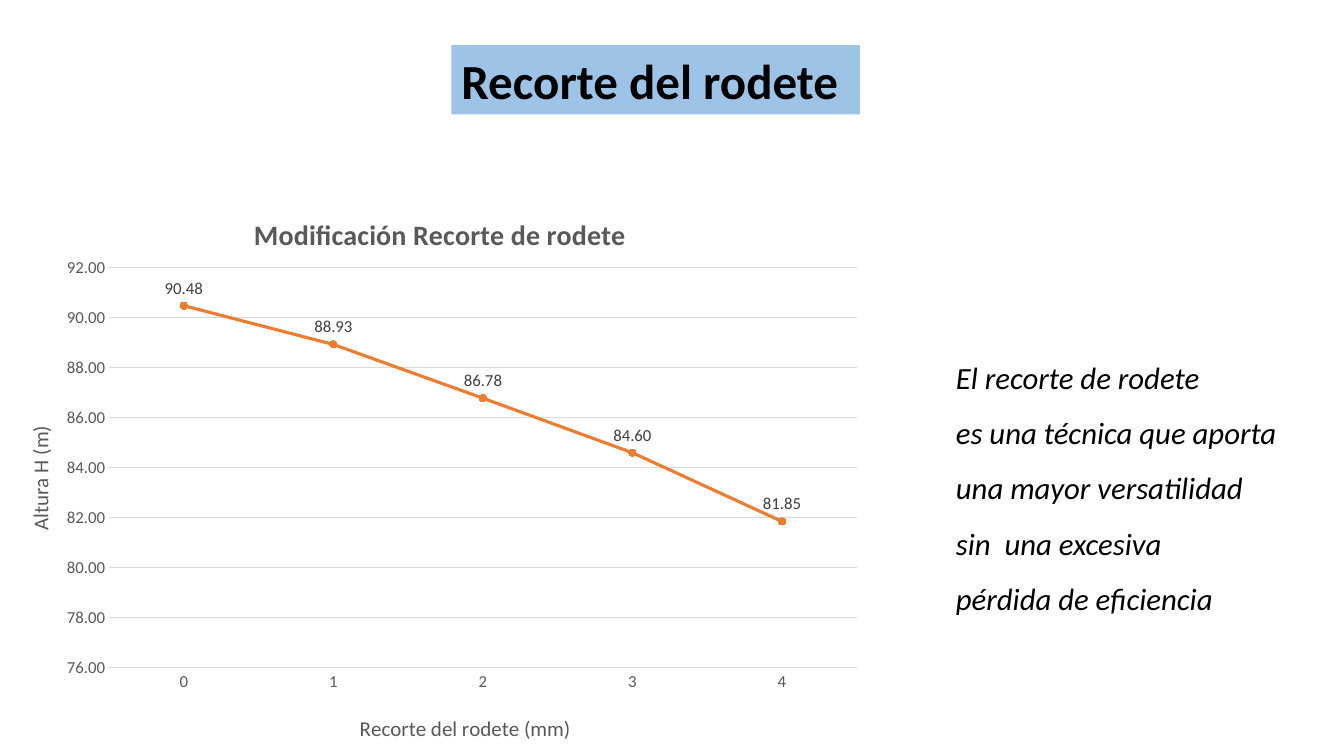
from dataclasses import dataclass

from lxml import etree
from pptx import Presentation
from pptx.chart.data import CategoryChartData
from pptx.dml.color import RGBColor
from pptx.enum.chart import XL_CHART_TYPE, XL_LABEL_POSITION, XL_MARKER_STYLE, XL_TICK_MARK
from pptx.enum.shapes import MSO_SHAPE
from pptx.enum.text import MSO_ANCHOR, PP_ALIGN
from pptx.oxml.ns import qn
from pptx.util import Emu, Pt

LINE_MARKERS = XL_CHART_TYPE.LINE_MARKERS
ABOVE = XL_LABEL_POSITION.ABOVE
CIRCLE = XL_MARKER_STYLE.CIRCLE
NO_TICK = XL_TICK_MARK.NONE
RECT = MSO_SHAPE.RECTANGLE
MIDDLE = MSO_ANCHOR.MIDDLE
LEFT = PP_ALIGN.LEFT
EMU_PER_PX = 9525


@dataclass(frozen=True)
class Theme:
    font: str = "Calibri"
    black: str = "000000"
    banner: str = "9DC3E6"
    series: str = "ED7D31"
    grid: str = "D9D9D9"
    muted: str = "595959"
    label: str = "404040"
    heading_size: int = 35
    body_size: int = 22
    chart_title_size: int = 20
    axis_title_size: int = 15
    tick_size: int = 12


THEME = Theme()


def px(n):
    return Emu(n * EMU_PER_PX)


def rgb(color):
    return RGBColor.from_string(color)


def style_font(font, size, color, bold=False, italic=False):
    font.name = THEME.font
    font.size = Pt(size)
    font.color.rgb = rgb(color)
    font.bold = bold
    font.italic = italic


def add_run(p, text, size, color, bold=False, italic=False):
    r = p.add_run()
    r.text = text
    style_font(r.font, size, color, bold, italic)


def set_layout(el, box, x, y, w=None, h=None):
    layout = el.find(qn("c:layout"))
    if layout is None:
        layout = etree.Element(qn("c:layout"))
        el.insert(0 if el.find(qn("c:tx")) is None else 1, layout)
    manual = etree.SubElement(layout, qn("c:manualLayout"))
    values = {"xMode": "edge", "yMode": "edge", "x": x / box[2], "y": y / box[3]}
    if w:
        etree.SubElement(manual, qn("c:layoutTarget")).set("val", "inner")
        values.update(w=w / box[2], h=h / box[3])
    for tag, value in values.items():
        etree.SubElement(manual, qn(f"c:{tag}")).set("val", str(value))


def add_chart_title(title, box, text, size, x, y, bold=False):
    add_run(title.text_frame.paragraphs[0], text, size, THEME.muted, bold)
    set_layout(title.element, box, x, y)


def style_axis(axis):
    axis.major_tick_mark = NO_TICK
    axis.minor_tick_mark = NO_TICK
    style_font(axis.tick_labels.font, THEME.tick_size, THEME.muted)


def add_heading(s, box):
    sp = s.shapes.add_shape(RECT, *map(px, box))
    sp.shadow.inherit = False
    sp.fill.solid()
    sp.fill.fore_color.rgb = rgb(THEME.banner)
    sp.line.fill.background()
    tf = sp.text_frame
    tf.word_wrap = True
    tf.vertical_anchor = MIDDLE
    p = tf.paragraphs[0]
    p.alignment = LEFT
    add_run(p, "Recorte del rodete", THEME.heading_size, THEME.black, bold=True)


def add_height_chart(s, box):
    data = CategoryChartData(number_format="0.00")
    data.categories = ["0", "1", "2", "3", "4"]
    data.add_series("Altura H (m)", [90.48, 88.93, 86.78, 84.60, 81.85])
    chart = s.shapes.add_chart(LINE_MARKERS, *map(px, box), data).chart
    chart.has_legend = False
    style_font(chart.font, THEME.tick_size, THEME.muted)
    set_layout(chart.element.find(".//" + qn("c:plotArea")), box, 108, 77, 712, 381)

    chart.has_title = True
    add_chart_title(chart.chart_title, box, "Modificación Recorte de rodete",
                    THEME.chart_title_size, 241, 22, bold=True)

    cat = chart.category_axis
    style_axis(cat)
    cat.format.line.color.rgb = rgb(THEME.grid)
    cat.format.line.width = Pt(0.75)
    add_chart_title(cat.axis_title, box, "Recorte del rodete (mm)",
                    THEME.axis_title_size, 343, 498)

    val = chart.value_axis
    style_axis(val)
    val.minimum_scale, val.maximum_scale, val.major_unit = 76, 92, 2
    val.tick_labels.number_format = "0.00"
    val.tick_labels.number_format_is_linked = False
    val.format.line.fill.background()
    val.major_gridlines.format.line.color.rgb = rgb(THEME.grid)
    val.major_gridlines.format.line.width = Pt(0.75)
    add_chart_title(val.axis_title, box, "Altura H (m)", THEME.axis_title_size, 25, 224)

    plot = chart.plots[0]
    plot.vary_by_categories = False
    series = plot.series[0]
    series.smooth = False
    series.format.line.color.rgb = rgb(THEME.series)
    series.format.line.width = Pt(2.25)
    marker = series.marker
    marker.style = CIRCLE
    marker.size = 5
    marker.format.fill.solid()
    marker.format.fill.fore_color.rgb = rgb(THEME.series)
    marker.format.line.color.rgb = rgb(THEME.series)
    labels = series.data_labels
    labels.show_value = True
    labels.position = ABOVE
    labels.number_format = "0.00"
    labels.number_format_is_linked = False
    style_font(labels.font, THEME.tick_size, THEME.label)


def add_conclusion(s, box):
    tf = s.shapes.add_textbox(*map(px, box)).text_frame
    tf.word_wrap = True
    lines = [
        "El recorte de rodete",
        "es una técnica que aporta una mayor versatilidad",
        "sin  una excesiva",
        "pérdida de eficiencia",
    ]
    for i, line in enumerate(lines):
        p = tf.add_paragraph() if i else tf.paragraphs[0]
        p.line_spacing = 1.5
        add_run(p, line, THEME.body_size, THEME.black, italic=True)


def main():
    prs = Presentation()
    prs.slide_width, prs.slide_height = px(1280), px(720)
    s = prs.slides.add_slide(prs.slide_layouts[6])
    add_height_chart(s, (-4, 178, 837, 542))
    add_conclusion(s, (901, 319, 332, 271))
    add_heading(s, (430, 43, 389, 66))
    prs.save("out.pptx")


if __name__ == "__main__":
    main()
